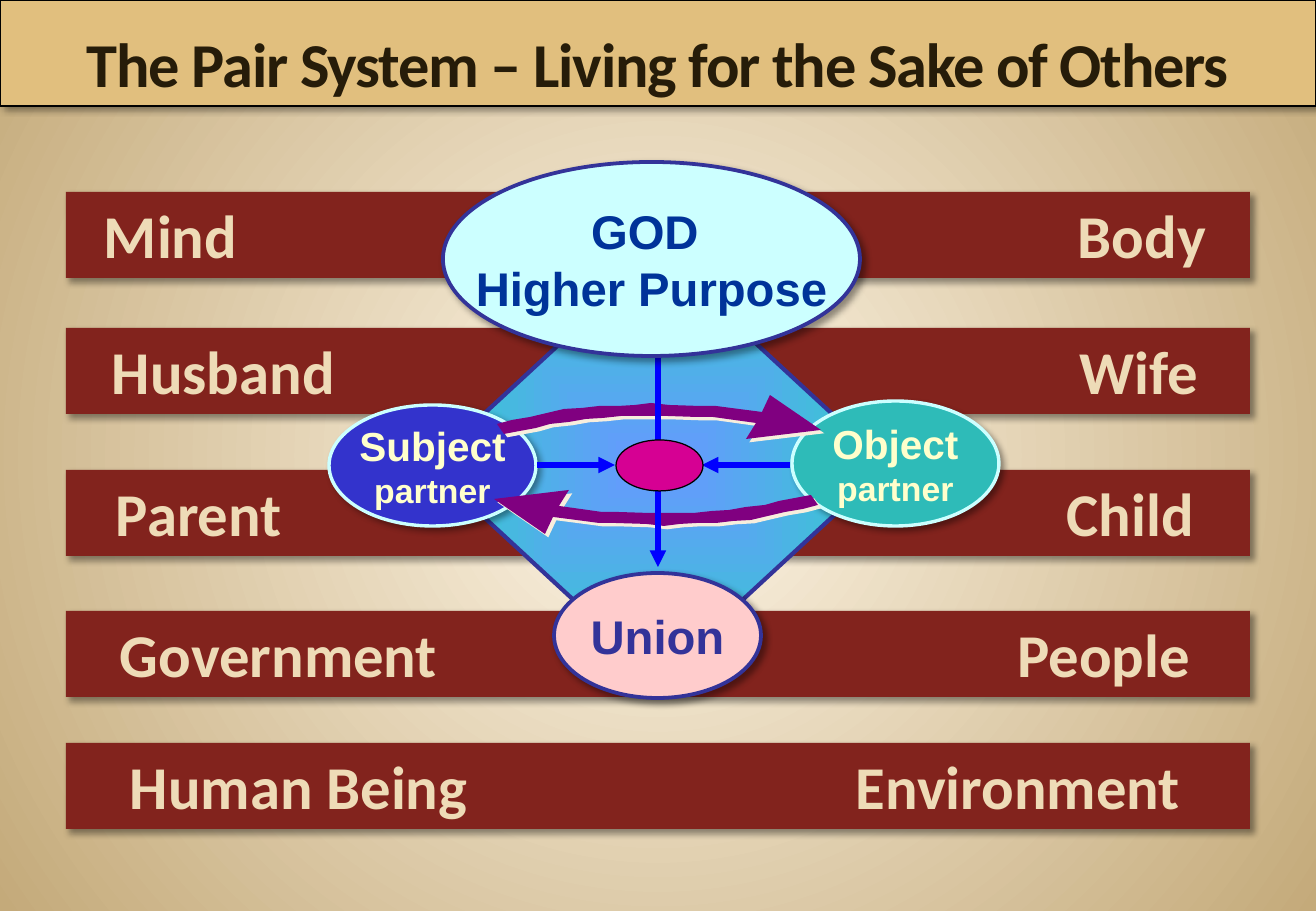
from lxml.etree import SubElement
from pptx import Presentation
from pptx.dml.color import RGBColor as RGB
from pptx.enum.shapes import MSO_CONNECTOR as CONNECTOR, MSO_SHAPE as SHAPE
from pptx.enum.text import MSO_ANCHOR as ANCHOR, PP_ALIGN as ALIGN
from pptx.oxml.ns import qn
from pptx.util import Pt

PX = 7526  # EMU per px, 121.5 px to the inch
COLORS = {
    "bar": "82231D", "bar_text": "EEDBB7", "title": "E1BF7E", "title_text": "261C09",
    "glow": "FFF7E8", "sand": "C4AA7A", "sky": "6699FF", "teal": "33CCCC",
    "subject": "3333CC", "object": "2EBBB8", "pale": "CCFFFF", "cream": "FFFFCC",
    "navy": "333399", "god_text": "003399", "pink": "FFCCCC", "magenta": "D60093",
    "purple": "800080", "arrow_shadow": "F7EEDD", "blue": "0000FF", "black": "000000",
}
RGBS = {name: RGB.from_string(value) for name, value in COLORS.items()}


def add_shadow(shape, color="black", alpha=40, blur=4, distance=3):
    shape.shadow.inherit = False
    effects = shape.element.spPr.find(qn("a:effectLst"))
    outer = SubElement(effects, qn("a:outerShdw"), blurRad=str(Pt(blur)), dist=str(Pt(distance)),
                       dir="2700000", algn="ctr", rotWithShape="0")
    tint = SubElement(outer, qn("a:srgbClr"), val=COLORS[color])
    SubElement(tint, qn("a:alpha"), val=str(alpha * 1000))


def add_block(kind, box, fill, line=None, width=0, lines=(), color="black", font="Arial"):
    shape = slide.shapes.add_shape(kind, *(value * PX for value in box))
    shape.shadow.inherit = False
    shape.fill.solid()
    shape.fill.fore_color.rgb = RGBS[fill]
    if line:
        shape.line.color.rgb = RGBS[line]
        shape.line.width = Pt(width)
    else:
        shape.line.fill.background()
    if lines:
        add_shadow(shape)
        frame = shape.text_frame
        frame.text = "\n".join(text for text, size in lines)
        frame.word_wrap = kind == SHAPE.RECTANGLE
        frame.vertical_anchor = ANCHOR.MIDDLE
        for paragraph, (text, size) in zip(frame.paragraphs, lines):
            paragraph.alignment = ALIGN.CENTER
            for run in paragraph.runs:
                run.font.size = Pt(size)
                run.font.name = font
                run.font.bold = True
                run.font.color.rgb = RGBS[color]
    return shape


presentation = Presentation()
presentation.slide_width = 1316 * PX
presentation.slide_height = 911 * PX
slide = presentation.slides.add_slide(presentation.slide_layouts[6])

# Bars: one word at each end, the second one on a right tab stop
BAR_WIDTH = 1184
bars = [
    (192, 38, "Mind", "Body"),
    (328, 46, "Husband", "Wife"),
    (470, 50, "Parent", "Child"),
    (611, 54, "Government", "People"),
    (743, 64, "Human Being", "Environment"),
]
for top, inset, left_word, right_word in bars:
    bar = add_block(SHAPE.RECTANGLE, (66, top, BAR_WIDTH, 86), "bar",
                    lines=[(f"{left_word}\t{right_word}", 36)], color="bar_text", font="Calibri")
    bar.text_frame.vertical_anchor = ANCHOR.TOP
    bar.text_frame.margin_left = inset * PX
    bar.text_frame.margin_right = 0
    paragraph = bar.text_frame.paragraphs[0]
    paragraph.alignment = ALIGN.LEFT
    tabs = SubElement(paragraph._p.get_or_add_pPr(), qn("a:tabLst"))
    SubElement(tabs, qn("a:tab"), pos=str((BAR_WIDTH - 2 * inset - 6) * PX), algn="r")

# Diamond, and the radial gradients of diamond and background
diamond = add_block(SHAPE.DIAMOND, (428, 253, 460, 425), "sky", "navy", 2.5)
gradients = [
    (slide.background.fill, slide.element, "circle", "glow", "sand"),
    (diamond.fill, diamond.element, "rect", "sky", "teal"),
]
for fill, element, form, inner, outer in gradients:
    fill.gradient()
    for stop, position, color in zip(fill.gradient_stops, (0, 1), (inner, outer)):
        stop.position = position
        stop.color.rgb = RGBS[color]
    gradient = next(element.iter(qn("a:gradFill")))
    gradient.remove(gradient.find(qn("a:lin")))
    center = SubElement(gradient, qn("a:path"), path=form)
    SubElement(center, qn("a:fillToRect"), l="50000", t="50000", r="50000", b="50000")

# Partners and union
add_block(SHAPE.OVAL, (329, 405, 207, 121), "subject", "pale", 2,
          [("Subject", 24), ("partner", 20)], "cream")
add_block(SHAPE.OVAL, (792, 401, 207, 125), "object", "pale", 2,
          [("Object", 24), ("partner", 20)], "cream")
add_block(SHAPE.OVAL, (554, 573, 207, 125), "pink", "navy", 2.25, [("Union", 28)], "navy")

# Curved arrows: the lower one is the upper one turned by half a circle
upper_arrow = [
    (756, 423), (727, 419), (713, 417), (697, 417), (667, 416), (638, 416), (621, 416),
    (603, 418), (586, 419), (569, 422), (550, 424), (536, 428), (520, 431), (504, 434),
    (497, 424), (512, 420), (530, 417), (547, 413), (564, 409), (582, 408), (599, 406),
    (618, 406), (635, 405), (651, 403), (669, 405), (700, 406), (716, 406), (731, 408),
    (762, 412), (770, 395), (821, 430), (746, 439),
]
lower_arrow = [(1315 - x, 929 - y) for x, y in upper_arrow]
for outline in (upper_arrow, lower_arrow):
    builder = slide.shapes.build_freeform(*outline[0], scale=PX)
    builder.add_line_segments(outline[1:], close=True)
    arrow = builder.convert_to_shape()
    arrow.fill.solid()
    arrow.fill.fore_color.rgb = RGBS["purple"]
    arrow.line.fill.background()
    add_shadow(arrow, "arrow_shadow", 100, 0, 2.8)

# Straight arrows
for ends in [(658, 344, 658, 567), (537, 465, 615, 465), (790, 465, 702, 465)]:
    connector = slide.shapes.add_connector(CONNECTOR.STRAIGHT, *(value * PX for value in ends))
    connector.line.color.rgb = RGBS["blue"]
    connector.line.width = Pt(3.25)
    properties = connector.element.spPr
    SubElement(properties.find(qn("a:ln")), qn("a:tailEnd"), type="triangle")
    SubElement(properties, qn("a:effectLst"))

# Center, higher purpose and title
add_block(SHAPE.OVAL, (616, 440, 87, 51), "magenta", "black", 0.75)
add_block(SHAPE.OVAL, (443, 162, 417, 194), "pale", "navy", 2.25,
          [("GOD ", 28), ("Higher Purpose", 28)], "god_text")
title = add_block(SHAPE.RECTANGLE, (0, 0, 1316, 106), "title", "black", 0.75,
                  [("The Pair System – Living for the Sake of Others", 37)], "title_text", "Calibri")
title.text_frame.vertical_anchor = ANCHOR.BOTTOM
title.text_frame.paragraphs[0].runs[0].font._element.set("spc", "-70")

presentation.save("out.pptx")
